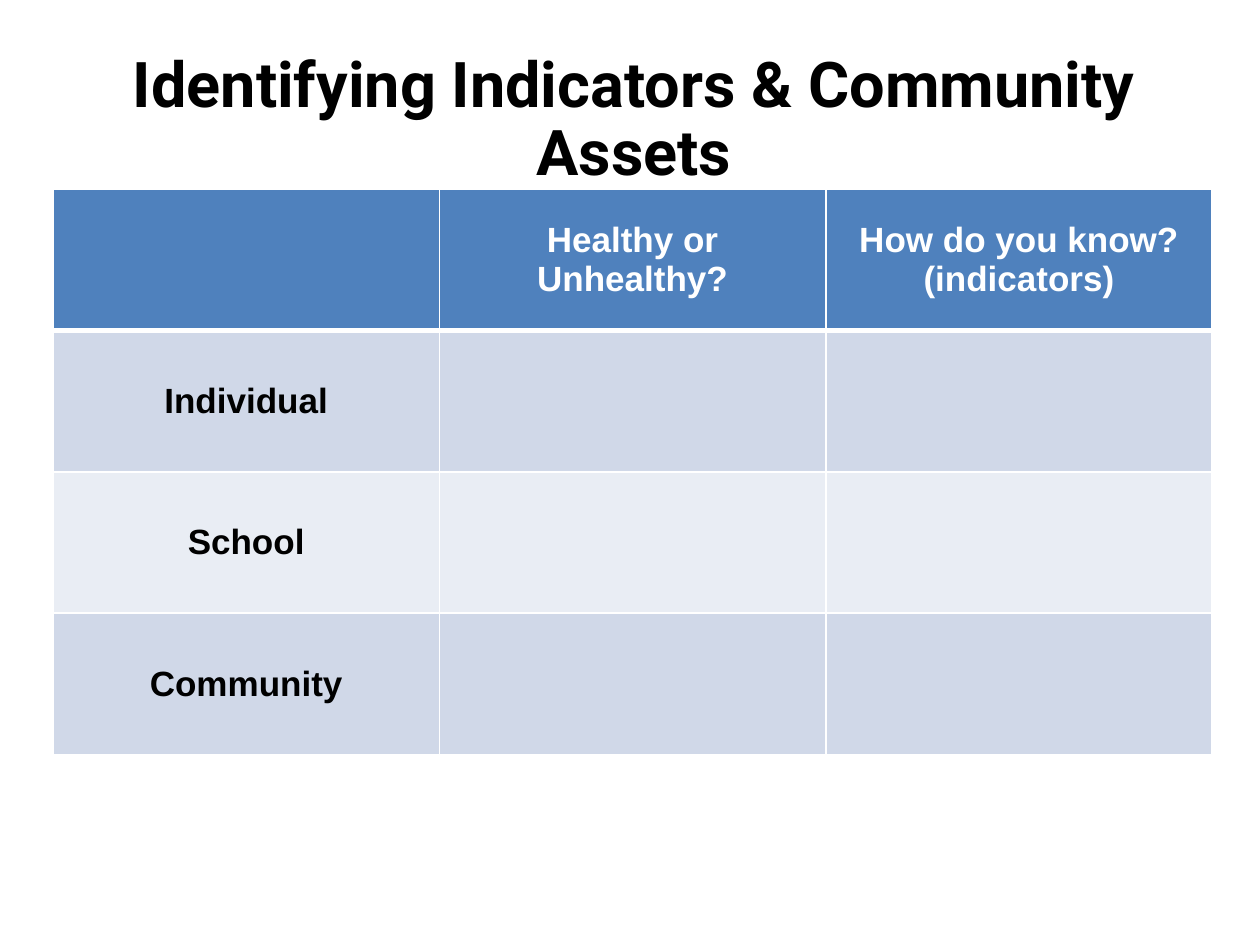
from dataclasses import dataclass

from lxml import etree
from pptx import Presentation
from pptx import util as u
from pptx.dml import color
from pptx.enum import text
from pptx.oxml import ns


@dataclass(frozen=True)
class Theme:
    header: str = "4F81BD"
    bands: tuple[str, str] = ("D0D8E8", "E9EDF4")
    black: str = "000000"
    white: str = "FFFFFF"
    title_font: str = "Roboto"
    table_font: str = "Arial"
    title_size: float = 36
    table_size: float = 20
    rule: float = 1
    header_rule: float = 3


@dataclass(frozen=True)
class Area:
    left: float
    top: float
    width: float
    height: float

    def lengths(self) -> list[u.Length]:
        return [u.Pt(value) for value in (self.left, self.top, self.width, self.height)]


THEME = Theme()
TITLE = "Identifying Indicators & Community Assets"
TITLE_AREA = Area(16.6, 30.2, 691.2, 78.5)
TABLE_AREA = Area(30.3, 108, 662.4, 323.2)
ROWS = [
    ["", "Healthy or Unhealthy?", "How do you know?\n(indicators)"],
    ["Individual", "", ""],
    ["School", "", ""],
    ["Community", "", ""],
]


def format_text(frame, font: str, size: float, ink: str) -> None:
    for para in frame.paragraphs:
        para.alignment = text.PP_ALIGN.CENTER
        for span in para.runs:
            span.font.name = font
            span.font.size = u.Pt(size)
            span.font.bold = True
            span.font.color.rgb = color.RGBColor.from_string(ink)


def add_title(page, area: Area) -> None:
    frame = page.shapes.add_textbox(*area.lengths()).text_frame
    frame.word_wrap = True
    frame.vertical_anchor = text.MSO_ANCHOR.MIDDLE
    frame.margin_left = frame.margin_right = u.Pt(5)
    frame.margin_top = frame.margin_bottom = u.Pt(3)
    frame.text = TITLE
    frame.paragraphs[0].line_spacing = 0.9
    format_text(frame, THEME.title_font, THEME.title_size, THEME.black)


def set_border(cell, side: str, width: float, position: int) -> None:
    line = etree.Element(ns.qn(f"a:{side}"), w=str(u.Pt(width)))
    fill = etree.SubElement(line, ns.qn("a:solidFill"))
    etree.SubElement(fill, ns.qn("a:srgbClr"), val=THEME.white)
    cell._tc.get_or_add_tcPr().insert(position, line)


def format_cell(cell, words: str, row: int) -> None:
    is_header = row == 0
    cell.text_frame.text = words
    cell.vertical_anchor = text.MSO_ANCHOR.MIDDLE
    ink = THEME.white if is_header else THEME.black
    format_text(cell.text_frame, THEME.table_font, THEME.table_size, ink)
    cell.fill.solid()
    shade = THEME.header if is_header else THEME.bands[(row - 1) % 2]
    cell.fill.fore_color.rgb = color.RGBColor.from_string(shade)
    below_header = {"lnT": 1, "lnB": 0}
    for position, side in enumerate(("lnL", "lnR", "lnT", "lnB")):
        heavy = below_header.get(side) == row
        set_border(cell, side, THEME.header_rule if heavy else THEME.rule, position)


def add_indicator_table(page, area: Area) -> None:
    table = page.shapes.add_table(len(ROWS), len(ROWS[0]), *area.lengths()).table
    for row, labels in enumerate(ROWS):
        for column, words in enumerate(labels):
            format_cell(table.cell(row, column), words, row)


def main() -> None:
    deck = Presentation()
    deck.slide_width, deck.slide_height = u.Pt(720), u.Pt(540)
    page = deck.slides.add_slide(deck.slide_layouts[6])
    add_title(page, TITLE_AREA)
    add_indicator_table(page, TABLE_AREA)
    deck.save("out.pptx")


if __name__ == "__main__":
    main()
